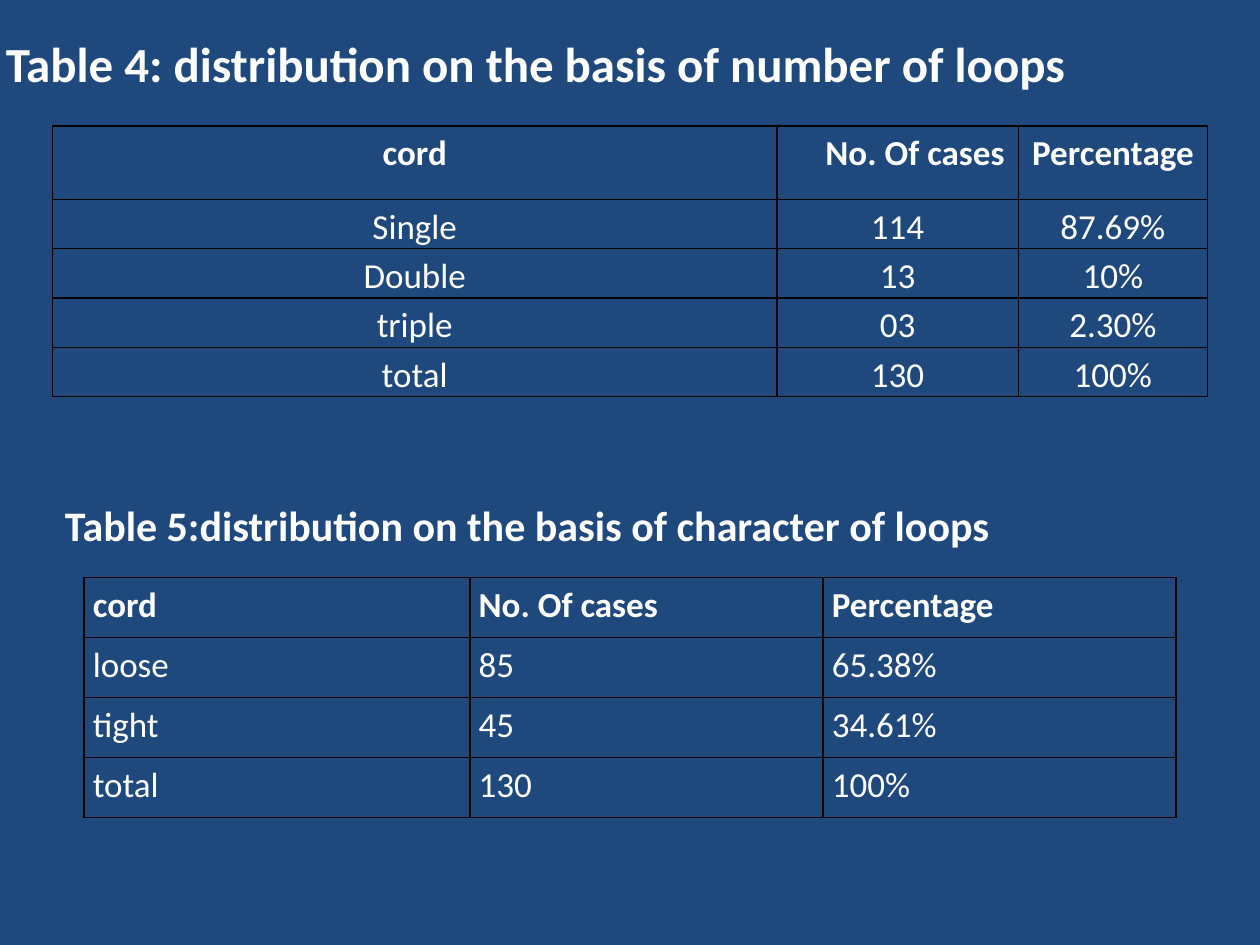
from lxml.etree import SubElement
from pptx import Presentation
from pptx.dml.color import RGBColor
from pptx.enum.text import MSO_ANCHOR, MSO_AUTO_SIZE, PP_ALIGN
from pptx.oxml.ns import qn
from pptx.util import Cm, Pt

HUES = {"back": "1F497D", "text": "FFFFFF", "line": "000000"}
INSET = {"margin_left": Cm(0.18), "margin_right": Cm(0.18),
         "margin_top": 0, "margin_bottom": 0}

LOOPS = [("cord", "No. Of cases", "Percentage"),
         ("Single", "114", "87.69%"),
         ("Double", "13", "10%"),
         ("triple", "03", "2.30%"),
         ("total", "130", "100%")]
KINDS = [("cord", "No. Of cases", "Percentage"),
         ("loose", "85", "65.38%"),
         ("tight", "45", "34.61%"),
         ("total", "130", "100%")]


class Deck:
    def __init__(self):
        self.file = Presentation()
        self.file.slide_width, self.file.slide_height = Cm(25.4), Cm(19.05)
        self.face = "Calibri"
        self.slide = self.file.slides.add_slide(self.file.slide_layouts[5])
        fill = self.slide.background.fill
        fill.solid()
        fill.fore_color.rgb = RGBColor.from_string(HUES["back"])

    def words(self, frame, text, size, bold, align):
        para = frame.paragraphs[0]
        para.alignment = align
        run = para.add_run()
        run.text = text
        style = {"name": self.face, "size": Pt(size), "bold": bold}
        for name, value in style.items():
            setattr(run.font, name, value)
        run.font.color.rgb = RGBColor.from_string(HUES["text"])
        return para

    def title(self, text, box, size):
        shape = self.slide.shapes.title
        for name, value in zip(("left", "top", "width", "height"), box):
            setattr(shape, name, Cm(value))
        frame = shape.text_frame
        frame.auto_size = MSO_AUTO_SIZE.NONE
        frame.vertical_anchor = MSO_ANCHOR.MIDDLE
        self.words(frame, text, size, True, PP_ALIGN.CENTER)

    def label(self, text, box, size):
        frame = self.slide.shapes.add_textbox(*map(Cm, box)).text_frame
        frame.word_wrap = True
        frame.auto_size = MSO_AUTO_SIZE.SHAPE_TO_FIT_TEXT
        self.words(frame, text, size, True, PP_ALIGN.LEFT)

    def border(self, cell):
        props = cell._tc.get_or_add_tcPr()
        for side in ("a:lnL", "a:lnR", "a:lnT", "a:lnB"):
            line = SubElement(props, qn(side), w=str(Pt(1)))
            fill = SubElement(line, qn("a:solidFill"))
            SubElement(fill, qn("a:srgbClr"), val=HUES["line"])

    def table(self, data, spot, cols, rows, align):
        size = sum(cols), sum(rows)
        grid = self.slide.shapes.add_table(
            len(data), len(cols), *map(Cm, spot + size)).table
        for col, width in zip(grid.columns, cols):
            col.width = Cm(width)
        for row, height in zip(grid.rows, rows):
            row.height = Cm(height)
        for r, line in enumerate(data):
            for c, text in enumerate(line):
                cell = grid.cell(r, c)
                for name, value in INSET.items():
                    setattr(cell, name, value)
                self.border(cell)
                cell.fill.background()
                para = self.words(cell.text_frame, text, 20, r == 0, align)
                para.line_spacing = 1.15
        return grid

    def indent(self, cell, gap):
        para = cell.text_frame.paragraphs[0]
        para.alignment = PP_ALIGN.LEFT
        para._p.get_or_add_pPr().set("marL", str(Cm(gap)))


def main():
    deck = Deck()
    deck.title("Table 4: distribution on the basis of number of loops",
               (-0.64, 0, 22.86, 2.54), 28)
    loops = deck.table(LOOPS, (1.06, 2.54), (14.6, 4.87, 3.81),
                       (1.48,) + (0.93,) * 4, PP_ALIGN.CENTER)
    deck.indent(loops.cell(0, 1), 0.8)
    deck.label("Table 5:distribution on the basis of character of loops",
               (1.06, 9.95, 22.86, 1.27), 24)
    deck.table(KINDS, (1.69, 11.64), (7.78, 7.12, 7.12),
               (1.21,) * 4, PP_ALIGN.LEFT)
    deck.file.save("out.pptx")


if __name__ == "__main__":
    main()
